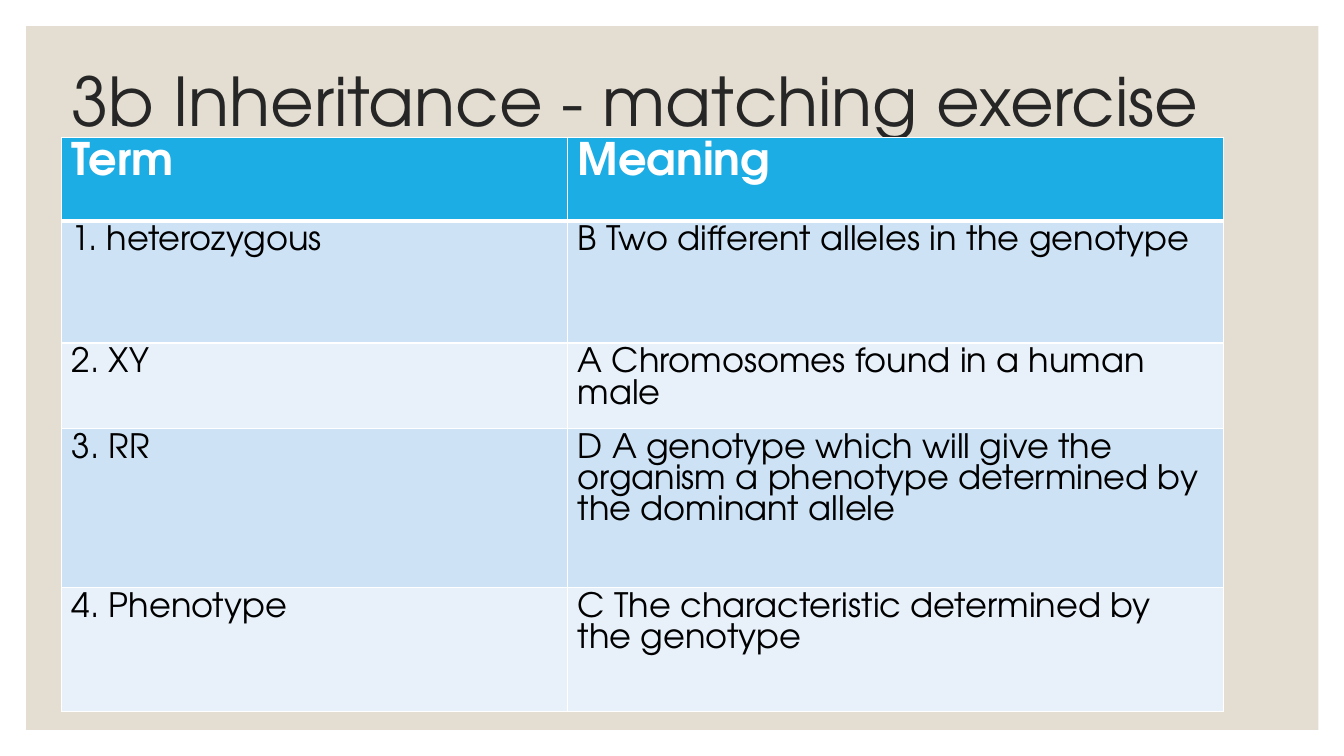
"""Build the inheritance matching exercise slide."""
from dataclasses import dataclass

from lxml import etree
from pptx import Presentation
from pptx.dml.color import RGBColor
from pptx.enum.shapes import MSO_SHAPE
from pptx.enum.text import MSO_ANCHOR, PP_ALIGN
from pptx.oxml.ns import qn
from pptx.util import Pt

RECTANGLE = MSO_SHAPE.RECTANGLE
MIDDLE = MSO_ANCHOR.MIDDLE
LEFT = PP_ALIGN.LEFT


@dataclass(frozen=True)
class Theme:
    font: str = "TeX Gyre Adventor"
    panel: str = "E3DED1"
    title: str = "262626"
    header: str = "1CADE4"
    bands: tuple = ("CDE3F5", "E8F1FA")
    white: str = "FFFFFF"
    black: str = "000000"
    title_size: int = 48
    header_size: int = 32
    body_size: int = 24


THEME = Theme()
ROWS = [
    ("Term", "Meaning"),
    ("1. heterozygous", "B Two different alleles in the genotype"),
    ("2. XY", "A Chromosomes found in a human male"),
    ("3. RR", "D A genotype which will give the organism a phenotype determined by the dominant allele"),
    ("4. Phenotype", "C The characteristic determined by the genotype"),
]
COLUMN_WIDTHS = (361.5, 468.5)
ROW_HEIGHTS = (59.8, 87.2, 61, 113.6, 88.6)


def format_text(paragraph, size, color, bold=False):
    for run in paragraph.runs:
        run.font.name = THEME.font
        run.font.size = Pt(size)
        run.font.bold = bold
        run.font.color.rgb = RGBColor.from_string(color)


def add_border(cell, side, width):
    properties = cell._tc.get_or_add_tcPr()
    line = etree.SubElement(properties, qn(f"a:ln{side}"), w=str(Pt(width)))
    fill = etree.SubElement(line, qn("a:solidFill"))
    etree.SubElement(fill, qn("a:srgbClr"), val=THEME.white)


presentation = Presentation()
presentation.slide_width = Pt(960)
presentation.slide_height = Pt(540)
slide = presentation.slides.add_slide(presentation.slide_layouts[5])

title = slide.shapes.title
title.left, title.top, title.width, title.height = Pt(44), Pt(23), Pt(858), Pt(103)
title.text_frame.text = "3b Inheritance - matching exercise"
title.text_frame.vertical_anchor = MIDDLE
title.text_frame.word_wrap = True
heading = title.text_frame.paragraphs[0]
heading.alignment = LEFT
heading.line_spacing = 0.9
format_text(heading, THEME.title_size, THEME.title)

panel = slide.shapes.add_shape(RECTANGLE, Pt(18.7), Pt(18.7), Pt(923), Pt(502.6))
panel.shadow.inherit = False
panel.fill.solid()
panel.fill.fore_color.rgb = RGBColor.from_string(THEME.panel)
panel.line.fill.background()
title.element.addprevious(panel.element)

table = slide.shapes.add_table(
    len(ROWS), len(COLUMN_WIDTHS), Pt(44), Pt(98),
    Pt(sum(COLUMN_WIDTHS)), Pt(sum(ROW_HEIGHTS)),
).table
for column, width in zip(table.columns, COLUMN_WIDTHS):
    column.width = Pt(width)

for row_index, texts in enumerate(ROWS):
    table.rows[row_index].height = Pt(ROW_HEIGHTS[row_index])
    is_header = row_index == 0
    fill_color = THEME.header if is_header else THEME.bands[(row_index - 1) % 2]
    text_color = THEME.white if is_header else THEME.black
    text_size = THEME.header_size if is_header else THEME.body_size
    for column_index, text in enumerate(texts):
        cell = table.cell(row_index, column_index)
        cell.text_frame.text = text
        format_text(cell.text_frame.paragraphs[0], text_size, text_color, is_header)
        for side in "LRTB":
            heavy = (row_index, side) in ((0, "B"), (1, "T"))
            add_border(cell, side, 3 if heavy else 1)
        cell.fill.solid()
        cell.fill.fore_color.rgb = RGBColor.from_string(fill_color)

presentation.save("out.pptx")
